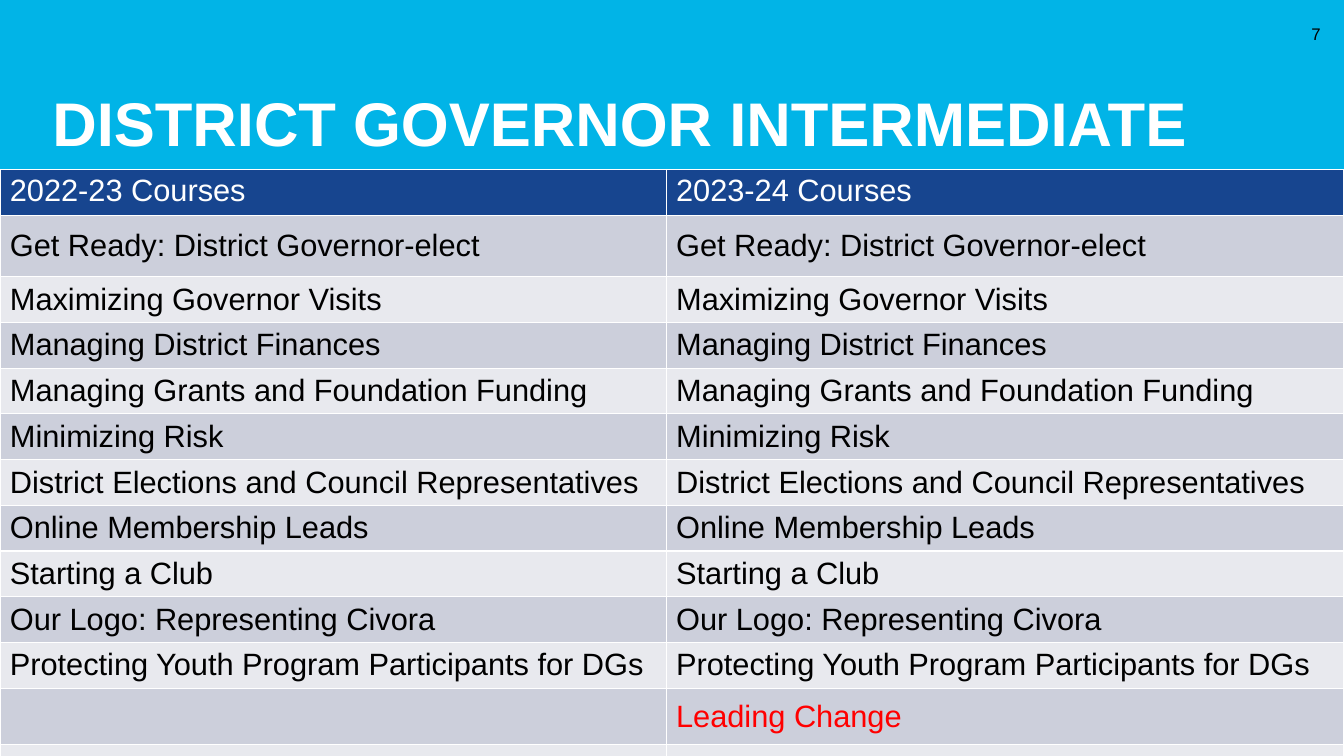
from lxml.etree import SubElement
from pptx import Presentation
from pptx.dml.color import RGBColor
from pptx.enum.shapes import MSO_SHAPE
from pptx.enum.text import MSO_ANCHOR, MSO_AUTO_SIZE, PP_ALIGN
from pptx.oxml.ns import qn
from pptx.util import Cm, Pt

SLIDE_WIDTH, SLIDE_HEIGHT = 33.87, 19.05
BANNER_HEIGHT = 4.27
COLUMN_WIDTHS = (16.79, 17.07)
ROW_HEIGHT = 1.12
SPECIAL_ROW_HEIGHTS = {1: 1.55, 11: 1.43, 12: 0.71}

SHARED_COURSES = [
    "Get Ready: District Governor-elect",
    "Maximizing Governor Visits",
    "Managing District Finances",
    "Managing Grants and Foundation Funding",
    "Minimizing Risk",
    "District Elections and Council Representatives",
    "Online Membership Leads",
    "Starting a Club",
    "Our Logo: Representing Civora",
    "Protecting Youth Program Participants for DGs",
]
NEW_COURSE = "Leading Change"
COURSE_ROWS = [
    ("2022-23 Courses", "2023-24 Courses"),
    *((course, course) for course in SHARED_COURSES),
    ("", NEW_COURSE),
    ("", ""),
]


def color(hex_string):
    return RGBColor.from_string(hex_string)


class CourseSlide:
    font_name = "Arial"
    banner_fill = "01B4E7"
    header_fill = "17458F"
    band_fills = ("E8E9EE", "CCCFDB")
    light_text, dark_text, new_text = "FFFFFF", "000000", "FF0000"
    border = "FFFFFF"

    def __init__(self, slide):
        self.slide = slide

    def format_text(self, text_frame, size, text_color, bold=False):
        for paragraph in text_frame.paragraphs:
            for run in paragraph.runs:
                run.font.name = self.font_name
                run.font.size = Pt(size)
                run.font.bold = bold
                run.font.color.rgb = color(text_color)

    def add_banner(self):
        banner = self.slide.shapes.add_shape(
            MSO_SHAPE.RECTANGLE, 0, 0, Cm(SLIDE_WIDTH), Cm(BANNER_HEIGHT))
        banner.shadow.inherit = False
        banner.fill.solid()
        banner.fill.fore_color.rgb = color(self.banner_fill)
        banner.line.fill.background()
        self.slide.shapes.title.element.addprevious(banner.element)

    def set_title(self, text):
        title = self.slide.shapes.title
        title.left, title.top = Cm(1.07), Cm(0)
        title.width, title.height = Cm(31.95), Cm(BANNER_HEIGHT)
        frame = title.text_frame
        frame.text = text
        frame.word_wrap = True
        frame.auto_size = MSO_AUTO_SIZE.NONE
        frame.vertical_anchor = MSO_ANCHOR.BOTTOM
        frame.margin_top = Cm(0)
        frame.margin_left = frame.margin_right = frame.margin_bottom = Cm(0.25)
        frame.paragraphs[0].alignment = PP_ALIGN.LEFT
        frame.paragraphs[0].line_spacing = 0.9
        self.format_text(frame, 44, self.light_text, bold=True)

    def add_page_number(self, number):
        box = self.slide.shapes.add_textbox(Cm(32.36), Cm(0.33), Cm(1.17), Cm(1.02))
        frame = box.text_frame
        frame.text = str(number)
        frame.word_wrap = True
        frame.vertical_anchor = MSO_ANCHOR.MIDDLE
        frame.paragraphs[0].alignment = PP_ALIGN.RIGHT
        self.format_text(frame, 12, self.dark_text)

    def add_borders(self, cell):
        properties = cell._tc.get_or_add_tcPr()
        for side in ("a:lnL", "a:lnR", "a:lnT", "a:lnB"):
            line = SubElement(properties, qn(side), w=str(Pt(1)))
            fill = SubElement(line, qn("a:solidFill"))
            SubElement(fill, qn("a:srgbClr"), val=self.border)

    def fill_cell(self, cell, text, row_index):
        is_header = row_index == 0
        self.add_borders(cell)
        cell.fill.solid()
        cell.fill.fore_color.rgb = color(
            self.header_fill if is_header else self.band_fills[row_index % 2])
        cell.margin_top = cell.margin_bottom = Cm(0.11)
        cell.margin_left = cell.margin_right = Cm(0.25)
        cell.vertical_anchor = MSO_ANCHOR.TOP if is_header else MSO_ANCHOR.MIDDLE
        cell.text_frame.text = text
        if is_header:
            text_color = self.light_text
        else:
            text_color = self.new_text if text == NEW_COURSE else self.dark_text
        self.format_text(cell.text_frame, 22, text_color)

    def add_course_table(self, rows):
        heights = [SPECIAL_ROW_HEIGHTS.get(index, ROW_HEIGHT) for index in range(len(rows))]
        table = self.slide.shapes.add_table(
            len(rows), len(COLUMN_WIDTHS), Cm(0), Cm(BANNER_HEIGHT),
            Cm(sum(COLUMN_WIDTHS)), Cm(sum(heights))).table
        for column, width in zip(table.columns, COLUMN_WIDTHS):
            column.width = Cm(width)
        for row_index, (row, height, texts) in enumerate(zip(table.rows, heights, rows)):
            row.height = Cm(height)
            for cell, text in zip(row.cells, texts):
                self.fill_cell(cell, text, row_index)


def main():
    presentation = Presentation()
    presentation.slide_width = Cm(SLIDE_WIDTH)
    presentation.slide_height = Cm(SLIDE_HEIGHT)
    title_only_layout = presentation.slide_layouts[5]
    course_slide = CourseSlide(presentation.slides.add_slide(title_only_layout))
    course_slide.add_banner()
    course_slide.set_title("DISTRICT GOVERNOR INTERMEDIATE")
    course_slide.add_page_number(7)
    course_slide.add_course_table(COURSE_ROWS)
    presentation.save("out.pptx")


if __name__ == "__main__":
    main()
